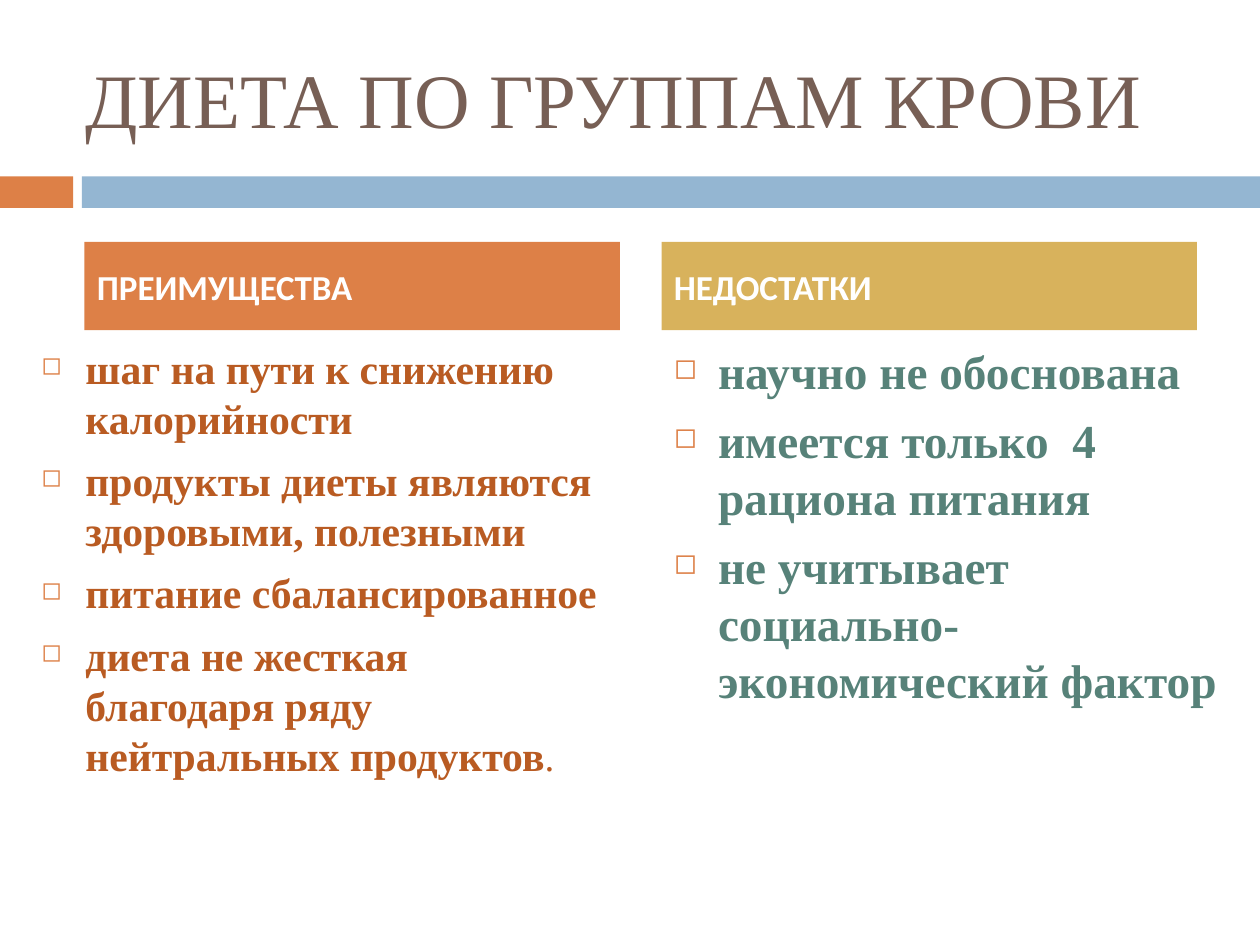
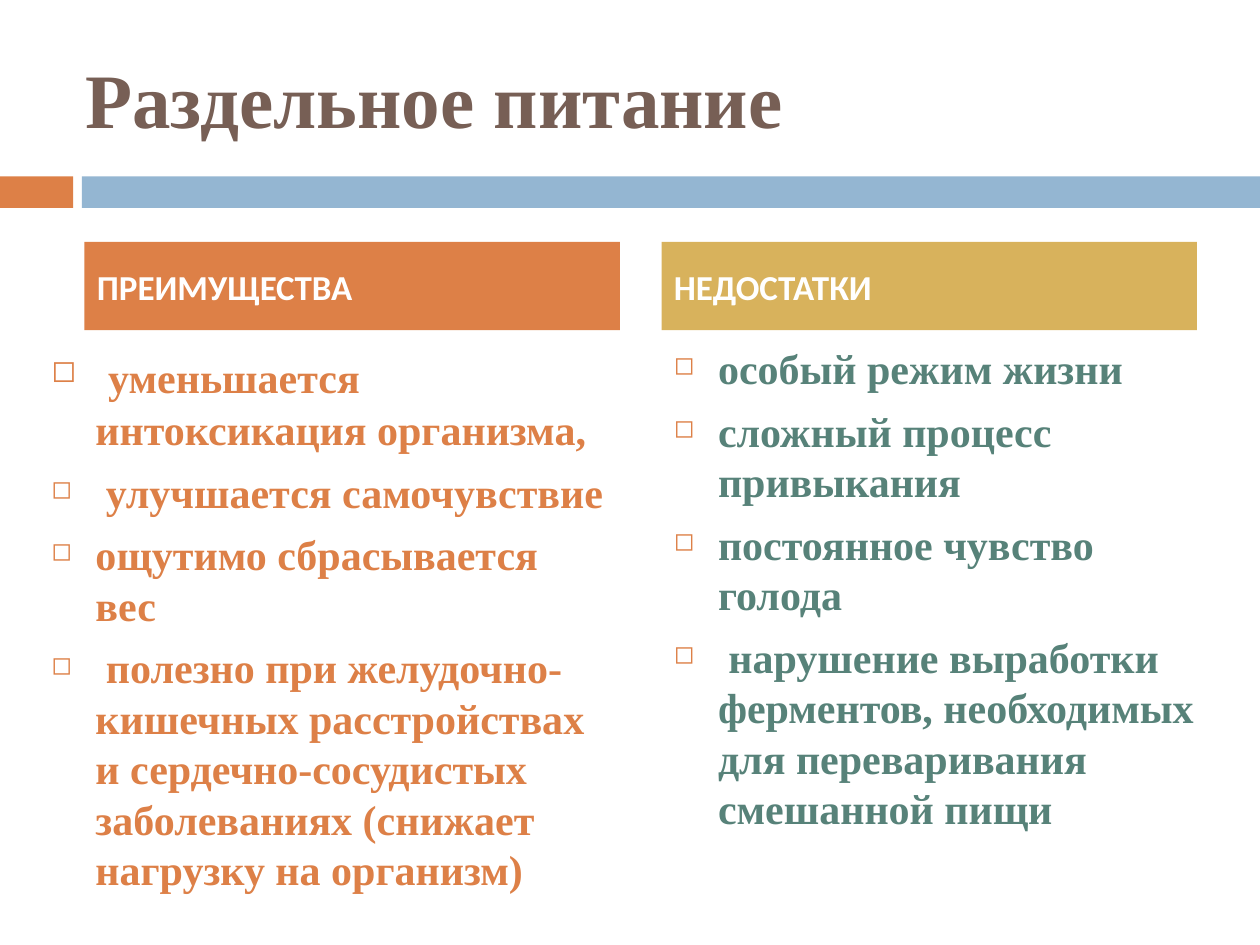
"""Build two slides that weigh the advantages and drawbacks of two diets."""
from dataclasses import dataclass

from lxml import etree
from pptx import Presentation
from pptx import util as u
from pptx.dml.color import RGBColor
from pptx.enum import shapes, text
from pptx.oxml import ns

PX = u.Inches(1) // 100


@dataclass(frozen=True)
class Theme:
    orange: str = "DD8047"
    blue: str = "94B6D2"
    gold: str = "D8B25C"
    brown: str = "775F55"
    rust: str = "B95B22"
    green: str = "578279"
    white: str = "FFFFFF"
    serif: str = "Times New Roman"
    sans: str = "Calibri"
    title_size: int = 44
    header_size: int = 20
    space_before: int = 7


theme = Theme()


def add_box(slide, box, fill=None):
    """Add a filled rectangle, or a text box when there is no fill."""
    box = [length * PX for length in box]
    if fill is None:
        return slide.shapes.add_textbox(*box)
    shape = slide.shapes.add_shape(shapes.MSO_SHAPE.RECTANGLE, *box)
    shape.shadow.inherit = False
    shape.fill.solid()
    shape.fill.fore_color.rgb = RGBColor.from_string(fill)
    shape.line.fill.background()
    return shape


def write(shape, paragraphs, style, anchor=text.MSO_ANCHOR.MIDDLE, space=0, bullet=False):
    """Fill a shape with paragraphs of (text, format changes) runs."""
    frame = shape.text_frame
    frame.word_wrap = True
    frame.vertical_anchor = anchor
    for index, runs in enumerate(paragraphs):
        paragraph = frame.paragraphs[0] if index == 0 else frame.add_paragraph()
        paragraph.alignment = text.PP_ALIGN.LEFT
        paragraph.space_before = u.Pt(space)
        if bullet:
            properties = paragraph._p.get_or_add_pPr()
            properties.set("marL", str(35 * PX))
            properties.set("indent", str(-35 * PX))
            color = etree.SubElement(properties, ns.qn("a:buClr"))
            etree.SubElement(color, ns.qn("a:srgbClr"), val=theme.orange)
            etree.SubElement(properties, ns.qn("a:buSzPct"), val="60000")
            etree.SubElement(properties, ns.qn("a:buChar"), char="◻")
        for words, changes in runs:
            run = paragraph.add_run()
            run.text = words
            values = {**style, **changes}
            run.font.color.rgb = RGBColor.from_string(values.pop("color"))
            values["size"] = u.Pt(values["size"])
            for name, value in values.items():
                setattr(run.font, name, value)


bands = [((0, 140, 58, 25), theme.orange), ((65, 140, 935, 25), theme.blue)]
headers = [
    ("ПРЕИМУЩЕСТВА", (67, 192, 425, 70), theme.orange),
    ("НЕДОСТАТКИ", (525, 192, 425, 70), theme.gold),
]
drawbacks_box = (525, 267, 452, 460)
title_style = {"name": theme.serif, "size": theme.title_size, "color": theme.brown}
header_style = {"name": theme.sans, "size": theme.header_size, "color": theme.white, "bold": True}
body_style = {"name": theme.serif, "bold": True}

diets = [
    {
        "title": "ДИЕТА ПО ГРУППАМ КРОВИ",
        "title_bold": False,
        "columns": [
            ((23, 267, 468, 460), {"size": 23.8, "color": theme.rust}, [
                [("шаг на пути к снижению калорийности", {})],
                [("продукты диеты являются здоровыми, полезными", {})],
                [("питание сбалансированное", {})],
                [("диета не жесткая благодаря ряду нейтральных продуктов", {}),
                 (".", {"size": 22.4, "bold": False})],
            ]),
            (drawbacks_box, {"size": 27, "color": theme.green}, [
                [("научно не обоснована", {})],
                [("имеется только  4 рациона питания", {})],
                [("не учитывает социально-экономический фактор", {})],
            ]),
        ],
    },
    {
        "title": "Раздельное питание",
        "title_bold": True,
        "columns": [
            ((31, 267, 460, 460), {"size": 24, "color": theme.orange}, [
                [(" ", {"size": 29}), ("уменьшается интоксикация организма,", {})],
                [(" улучшается самочувствие", {})],
                [("ощутимо сбрасывается вес", {})],
                [(" полезно при желудочно-кишечных расстройствах и сердечно-сосудистых "
                  "заболеваниях (снижает нагрузку на организм)", {})],
            ]),
            (drawbacks_box, {"size": 24, "color": theme.green}, [
                [("особый режим жизни", {})],
                [("сложный процесс привыкания", {})],
                [("постоянное чувство голода", {})],
                [(" нарушение выработки ферментов, необходимых для переваривания "
                  "смешанной пищи", {})],
            ]),
        ],
    },
]

presentation = Presentation()
presentation.slide_width = 1000 * PX
presentation.slide_height = 750 * PX

for diet in diets:
    slide = presentation.slides.add_slide(presentation.slide_layouts[6])
    for box, fill in bands:
        add_box(slide, box, fill)
    title = add_box(slide, (58, 30, 892, 95))
    write(title, [[(diet["title"], {"bold": diet["title_bold"]})]], title_style)
    for box, style, points in diet["columns"]:
        write(add_box(slide, box), points, {**body_style, **style},
              text.MSO_ANCHOR.TOP, theme.space_before, bullet=True)
    for heading, box, fill in headers:
        write(add_box(slide, box, fill), [[(heading, {})]], header_style,
              space=theme.space_before)

presentation.save("out.pptx")
